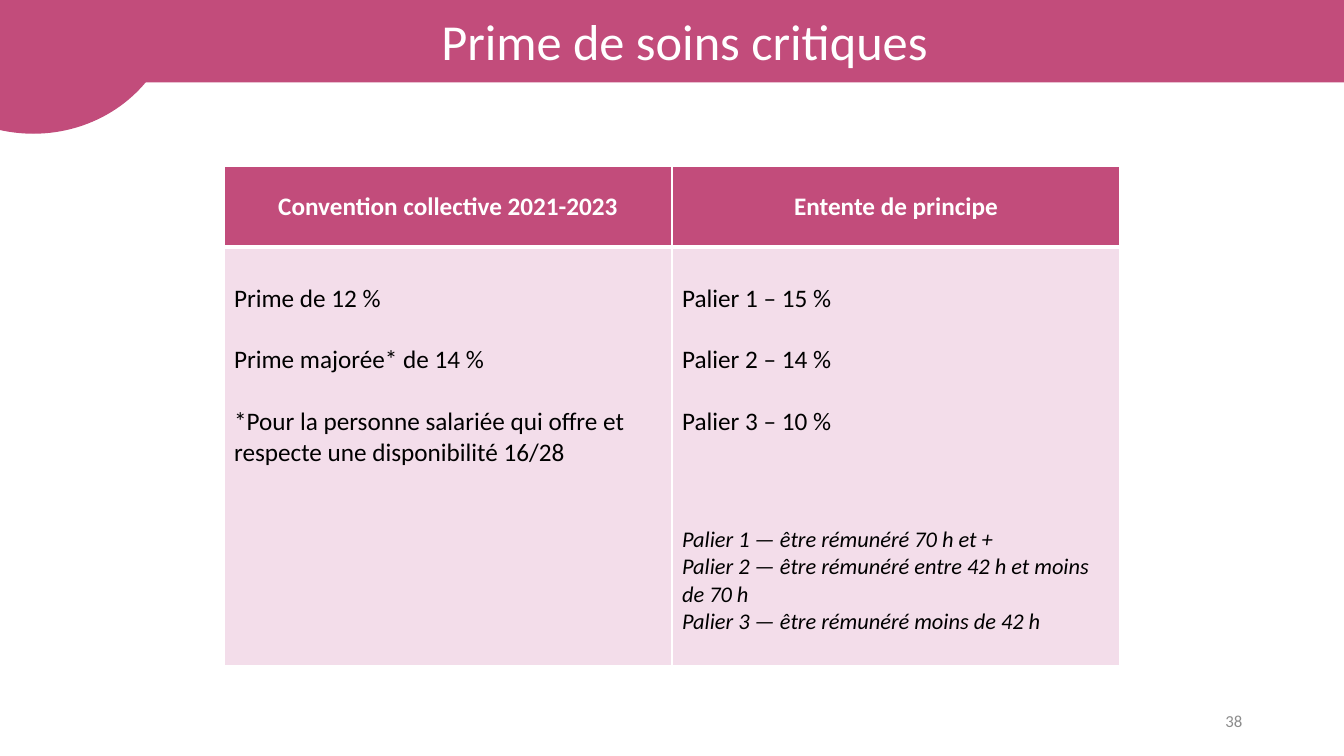
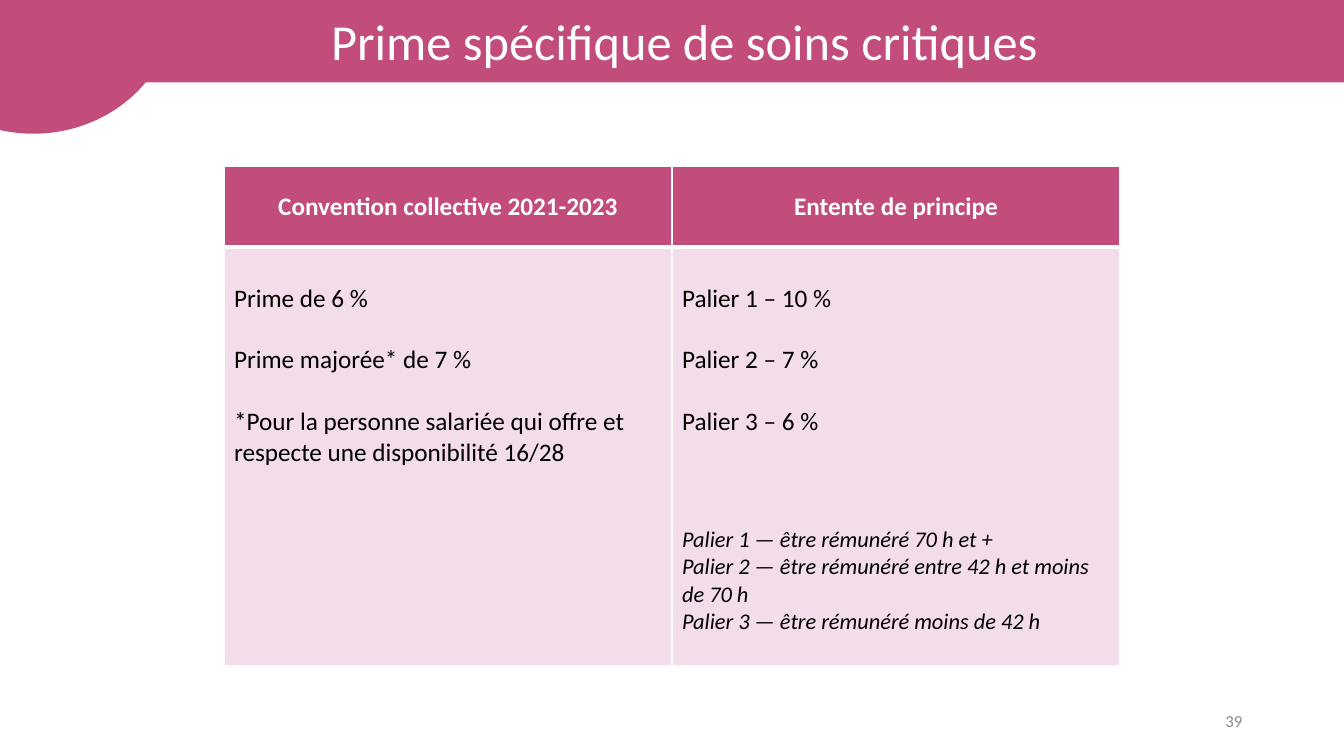
from dataclasses import dataclass

from lxml import etree
from pptx import Presentation
from pptx.dml.color import RGBColor
from pptx.enum.shapes import MSO_SHAPE
from pptx.enum.text import MSO_ANCHOR, PP_ALIGN
from pptx.oxml.ns import qn
from pptx.util import Emu, Inches, Pt

ROUNDED, OVAL = MSO_SHAPE.ROUNDED_RECTANGLE, MSO_SHAPE.OVAL
LEFT, CENTER, RIGHT = PP_ALIGN.LEFT, PP_ALIGN.CENTER, PP_ALIGN.RIGHT
TOP, MIDDLE = MSO_ANCHOR.TOP, MSO_ANCHOR.MIDDLE

PINK = RGBColor(0xC2, 0x4C, 0x7B)
PALE_PINK = RGBColor(0xF3, 0xDD, 0xEA)
WHITE = RGBColor(0xFF, 0xFF, 0xFF)
BLACK = RGBColor(0x00, 0x00, 0x00)
GREY = RGBColor(0x8C, 0x8C, 0x8C)

FONT = "Calibri"
SLIDE_WIDTH, SLIDE_HEIGHT = Inches(13.33), Inches(7.5)
TABLE_LEFT = SLIDE_WIDTH // 6
COLUMN_WIDTH = SLIDE_WIDTH // 3
TABLE_TOP = SLIDE_HEIGHT * 0.22
ROW_HEIGHTS = (Inches(0.8), Inches(4.15))
BODY_MARGIN_TOP = Inches(0.36)
LINE_GAP, NOTES_GAP = 22, 63.5

HEADERS = ("Convention collective 2021-2023", "Entente de principe")
CONDITION = "*Pour la personne salariée qui offre et respecte une disponibilité 16/28"
TIER_NOTES = (
    "Palier 1 — être rémunéré 70 h et +",
    "Palier 2 — être rémunéré entre 42 h et moins de 70 h",
    "Palier 3 — être rémunéré moins de 42 h",
)


@dataclass(frozen=True)
class Bonus:
    title: str
    number: int
    base_rate: int
    raised_rate: int
    tier_rates: tuple[int, ...]


BONUSES = (
    Bonus("Prime de soins critiques", 38, 12, 14, (15, 14, 10)),
    Bonus("Prime spécifique de soins critiques", 39, 6, 7, (10, 7, 6)),
)


def write(frame, text: str, *, size: float, color: RGBColor, align=LEFT,
          bold: bool = False, italic: bool = False, before: float = 0) -> None:
    """Fill the first paragraph of a text frame, or append one if it is taken."""
    paragraph = frame.paragraphs[0]
    if paragraph.runs:
        paragraph = frame.add_paragraph()
    paragraph.alignment = align
    paragraph.space_before = Pt(before)
    run = paragraph.add_run()
    run.text = text
    font = run.font
    font.name, font.size, font.bold, font.italic = FONT, Pt(size), bold, italic
    font.color.rgb = color


def add_pink_shape(slide, kind, left: float, top: float, width: float, height: float):
    shape = slide.shapes.add_shape(
        kind, Inches(left), Inches(top), Inches(width), Inches(height))
    shape.shadow.inherit = False
    shape.fill.solid()
    shape.fill.fore_color.rgb = PINK
    shape.line.color.rgb = PINK
    shape.line.width = Pt(1)
    return shape


def add_frame(slide, title: str, number: int) -> None:
    """Draw the title band, its corner disc and the slide number."""
    band = add_pink_shape(slide, ROUNDED, 0, 0, 13.58, 0.81)
    band.text_frame.vertical_anchor = MIDDLE
    write(band.text_frame, title, size=36, color=WHITE, align=CENTER)
    add_pink_shape(slide, OVAL, -1.08, -1.33, 2.82, 2.65)

    box = slide.shapes.add_textbox(Inches(9.42), Inches(6.95), Inches(3), Inches(0.4))
    box.text_frame.word_wrap = True
    box.text_frame.vertical_anchor = MIDDLE
    write(box.text_frame, str(number), size=12, color=GREY, align=RIGHT)


def style_cell(cell, fill: RGBColor, anchor, *, top: float = 1, bottom: float = 1) -> None:
    """Set the fill, anchor and white borders, with border widths in points."""
    properties = cell._tc.get_or_add_tcPr()
    for side, width in (("L", 1), ("R", 1), ("T", top), ("B", bottom)):
        border = etree.SubElement(properties, qn(f"a:ln{side}"), w=str(Pt(width)))
        solid = etree.SubElement(border, qn("a:solidFill"))
        etree.SubElement(solid, qn("a:srgbClr"), val=str(WHITE))
    cell.fill.solid()
    cell.fill.fore_color.rgb = fill
    cell.vertical_anchor = anchor


def add_comparison(slide, bonus: Bonus) -> None:
    table = slide.shapes.add_table(
        2, 2, TABLE_LEFT, Emu(int(TABLE_TOP)), 2 * COLUMN_WIDTH, sum(ROW_HEIGHTS)).table
    table.horz_banding = False
    for row, height in zip(table.rows, ROW_HEIGHTS):
        row.height = height

    current = (f"Prime de {bonus.base_rate} %",
               f"Prime majorée* de {bonus.raised_rate} %", CONDITION)
    agreed = tuple(f"Palier {tier} – {rate} %"
                   for tier, rate in enumerate(bonus.tier_rates, 1))
    for index, (header, lines) in enumerate(zip(HEADERS, (current, agreed))):
        table.columns[index].width = COLUMN_WIDTH
        head, body = table.cell(0, index), table.cell(1, index)
        style_cell(head, PINK, MIDDLE, bottom=3)
        write(head.text_frame, header, size=18, color=WHITE, align=CENTER, bold=True)
        style_cell(body, PALE_PINK, TOP, top=3)
        body.margin_top = BODY_MARGIN_TOP
        for position, line in enumerate(lines):
            write(body.text_frame, line, size=18, color=BLACK,
                  before=LINE_GAP if position else 0)

    notes_frame = table.cell(1, 1).text_frame
    for position, note in enumerate(TIER_NOTES):
        write(notes_frame, note, size=16, color=BLACK, italic=True,
              before=0 if position else NOTES_GAP)


def main() -> None:
    presentation = Presentation()
    presentation.slide_width, presentation.slide_height = SLIDE_WIDTH, SLIDE_HEIGHT
    blank = presentation.slide_layouts[6]
    for bonus in BONUSES:
        slide = presentation.slides.add_slide(blank)
        add_frame(slide, bonus.title, bonus.number)
        add_comparison(slide, bonus)
    presentation.save("out.pptx")


if __name__ == "__main__":
    main()
